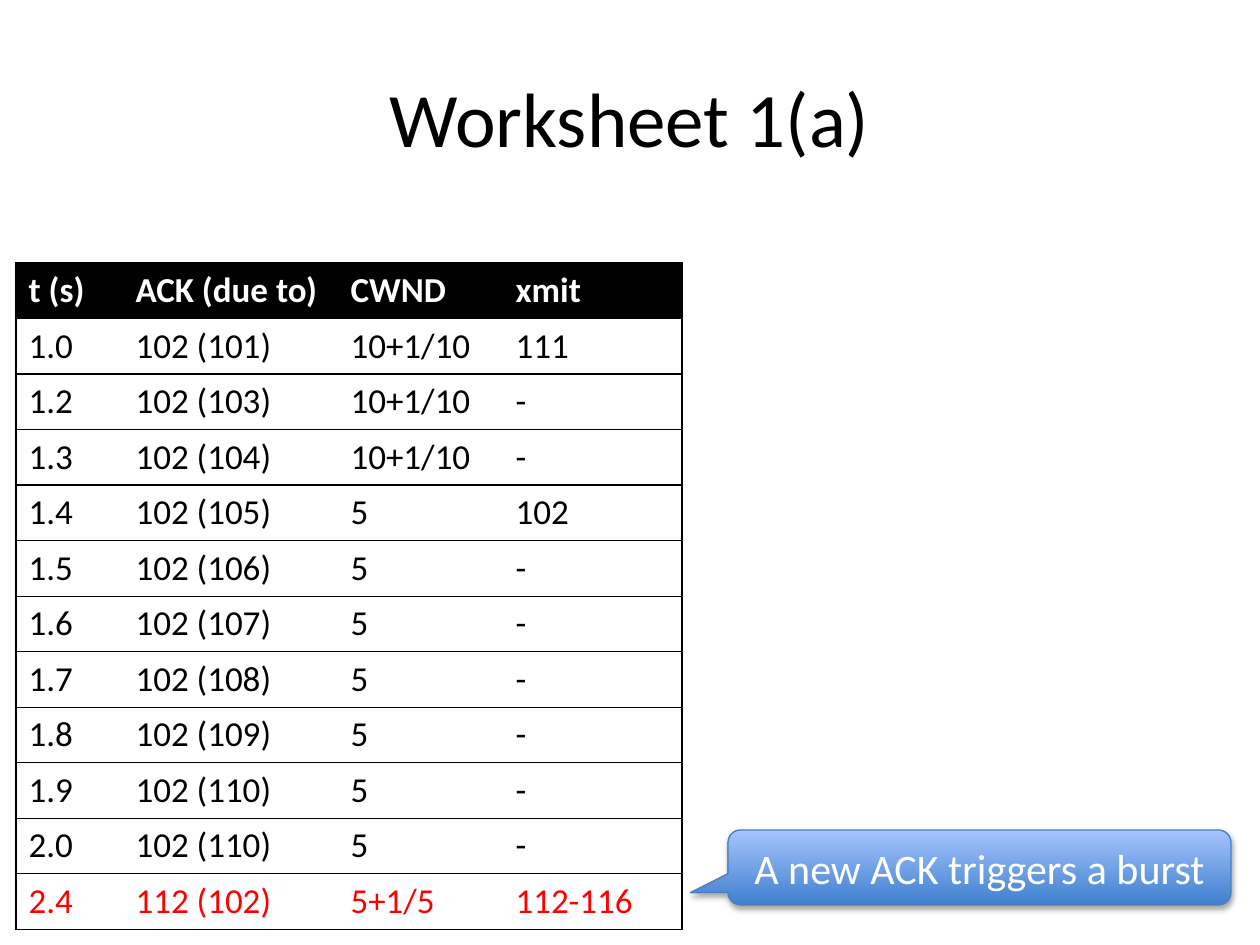
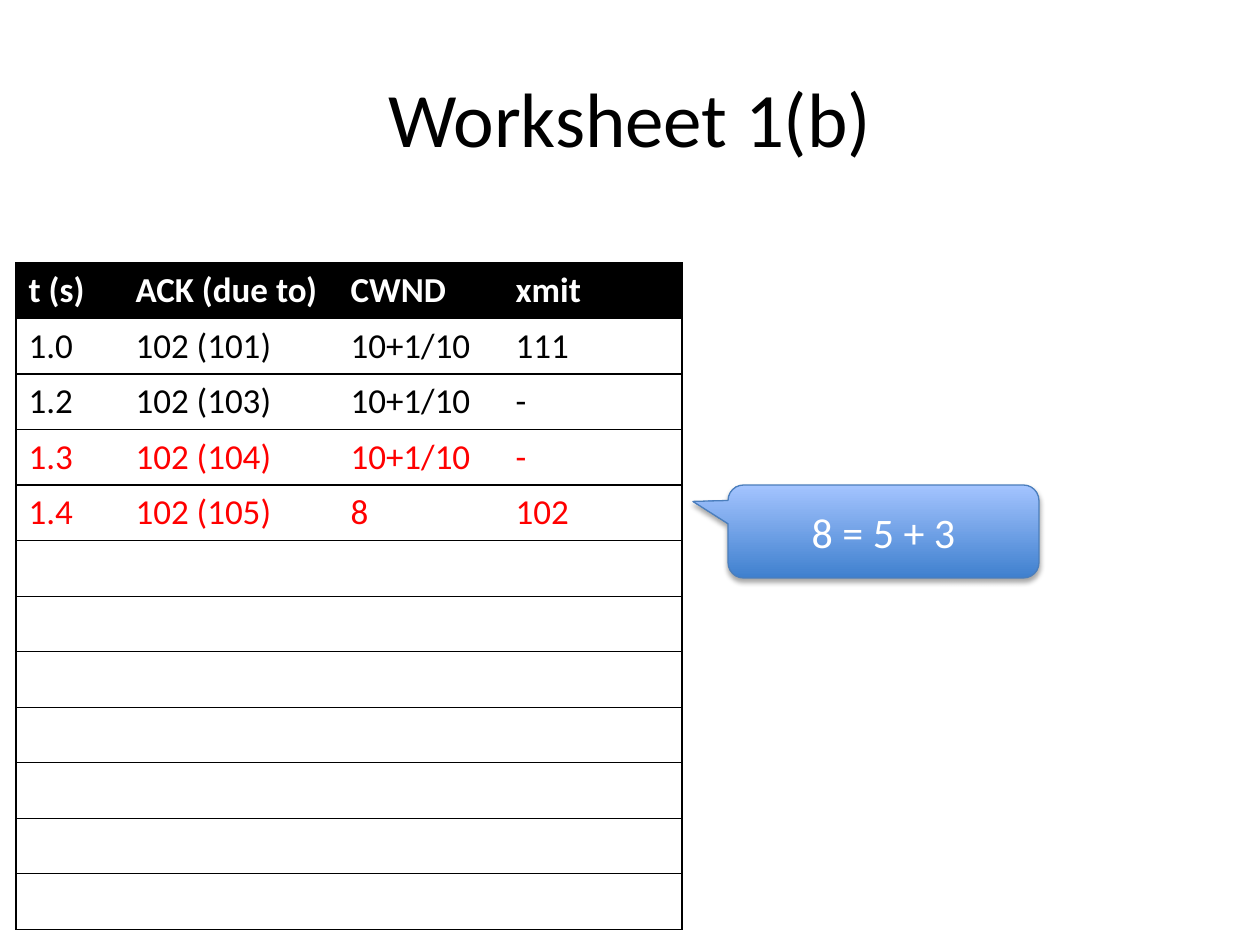
import dataclasses

import pptx
import pptx.util
import pptx.dml.color
import pptx.enum.shapes
import pptx.enum.text
import pptx.oxml
import pptx.oxml.ns

Rgb = pptx.dml.color.RGBColor.from_string
Pt = pptx.util.Pt
PX = 914400 / 126
qn = pptx.oxml.ns.qn


@dataclasses.dataclass(frozen=True)
class Theme:
    face: str = "Calibri"
    black: str = "000000"
    white: str = "FFFFFF"
    red: str = "FF0000"
    deep: str = "3F80CE"
    pale: str = "A4C4FF"
    edge: str = "4B7EBC"
    title: int = 44
    note: int = 24
    cell: int = 20
    rule: float = 0.75


T = Theme()
NS = pptx.oxml.ns.nsdecls("a")
LINE = (f'<a:solidFill><a:srgbClr val="{T.black}"/></a:solidFill>')
SHADE = (f'<a:outerShdw {NS} blurRad="{Pt(3.1)}" dist="{Pt(1.8)}" dir="5400000" '
         f'rotWithShape="0"><a:srgbClr val="{T.black}"><a:alpha val="35000"/>'
         '</a:srgbClr></a:outerShdw>')


def px(*vals):
    """Turn pixel lengths into EMU."""
    return [round(v * PX) for v in vals]


def write(frame, text, size, color, align, bold=False):
    frame.vertical_anchor = pptx.enum.text.MSO_ANCHOR.MIDDLE
    frame.word_wrap = True
    frame.text = text
    para = frame.paragraphs[0]
    para.alignment = align
    for run in para.runs:
        look = {"name": T.face, "size": Pt(size), "bold": bold}
        for key, val in look.items():
            setattr(run.font, key, val)
        run.font.color.rgb = Rgb(color)


HEAD = ["t (s)", "ACK (due to)", "CWND", "xmit"]
START = [
    ["1.0", "102 (101)", "10+1/10", "111"],
    ["1.2", "102 (103)", "10+1/10", "-"],
    ["1.3", "102 (104)", "10+1/10", "-"],
]
STALL = [[f"1.{n}", f"102 ({n + 101})", "5", "-"] for n in range(5, 10)]
COLS = [107, 215, 165, 179]
ROWS, HIGH = 12, 55

# title, body rows, red rows, callout text, callout box, callout tip
SHEETS = [
    ("Worksheet 1(a)",
     START + [["1.4", "102 (105)", "5", "102"]] + STALL
     + [["2.0", "102 (110)", "5", "-"], ["2.4", "112 (102)", "5+1/5", "112-116"]],
     {11}, "A new ACK triggers a burst", (728, 830, 503, 75), (-0.575, 0.336)),
    ("Worksheet 1(b)",
     START + [["1.4", "102 (105)", "8", "102"]],
     {3, 4}, "8 = 5 + 3", (728, 485, 311, 93), (-0.613, -0.323)),
]

deck = pptx.Presentation()
deck.slide_width, deck.slide_height = px(1260, 945)
LEFT = pptx.enum.text.PP_ALIGN.LEFT
MID = pptx.enum.text.PP_ALIGN.CENTER

for name, body, reds, note, box, tip in SHEETS:
    slide = deck.slides.add_slide(deck.slide_layouts[5])
    title = slide.shapes.title
    title.left, title.top, title.width, title.height = px(63, 38, 1134, 157)
    write(title.text_frame, name, T.title, T.black, MID)

    # table with ruled rows and an outer frame
    grid = slide.shapes.add_table(
        ROWS, len(COLS), *px(16, 263, sum(COLS), ROWS * HIGH)).table
    grid.horz_banding = False
    for col, wide in zip(grid.columns, px(*COLS)):
        col.width = wide
    lines = [HEAD] + body
    lines += [[""] * len(COLS)] * (ROWS - len(lines))
    for r, line in enumerate(lines):
        grid.rows[r].height = px(HIGH)[0]
        color = T.white if r == 0 else T.red if r in reds else T.black
        for c, text in enumerate(line):
            cell = grid.cell(r, c)
            write(cell.text_frame, text, T.cell, color, LEFT, r == 0)
            para = cell.text_frame.paragraphs[0]
            para._p.append(pptx.oxml.parse_xml(
                f'<a:endParaRPr {NS} sz="{T.cell * 100}">'
                f'<a:latin typeface="{T.face}"/></a:endParaRPr>'))
            sides = {"lnL": c == 0, "lnR": c == len(COLS) - 1,
                     "lnT": True, "lnB": True}
            props = cell._tc.get_or_add_tcPr()
            for side, shown in sides.items():
                paint = LINE if shown else "<a:noFill/>"
                props.append(pptx.oxml.parse_xml(
                    f'<a:{side} {NS} w="{Pt(T.rule)}">{paint}</a:{side}>'))
            if r == 0:
                cell.fill.solid()
                cell.fill.fore_color.rgb = Rgb(T.black)
            else:
                cell.fill.background()

    # callout beside the red rows
    call = slide.shapes.add_shape(
        pptx.enum.shapes.MSO_SHAPE.ROUNDED_RECTANGULAR_CALLOUT, *px(*box))
    for n, val in enumerate((*tip, 0.167)):
        call.adjustments[n] = val
    call.fill.gradient()
    call.fill.gradient_angle = 90
    for n, (stop, shade) in enumerate(zip(call.fill.gradient_stops, (T.deep, T.pale))):
        stop.position = n
        stop.color.rgb = Rgb(shade)
    call.line.color.rgb = Rgb(T.edge)
    call.line.width = Pt(T.rule)
    call.shadow.inherit = False
    call._element.spPr.find(qn("a:effectLst")).append(pptx.oxml.parse_xml(SHADE))
    write(call.text_frame, note, T.note, T.white, MID)

deck.save("out.pptx")
